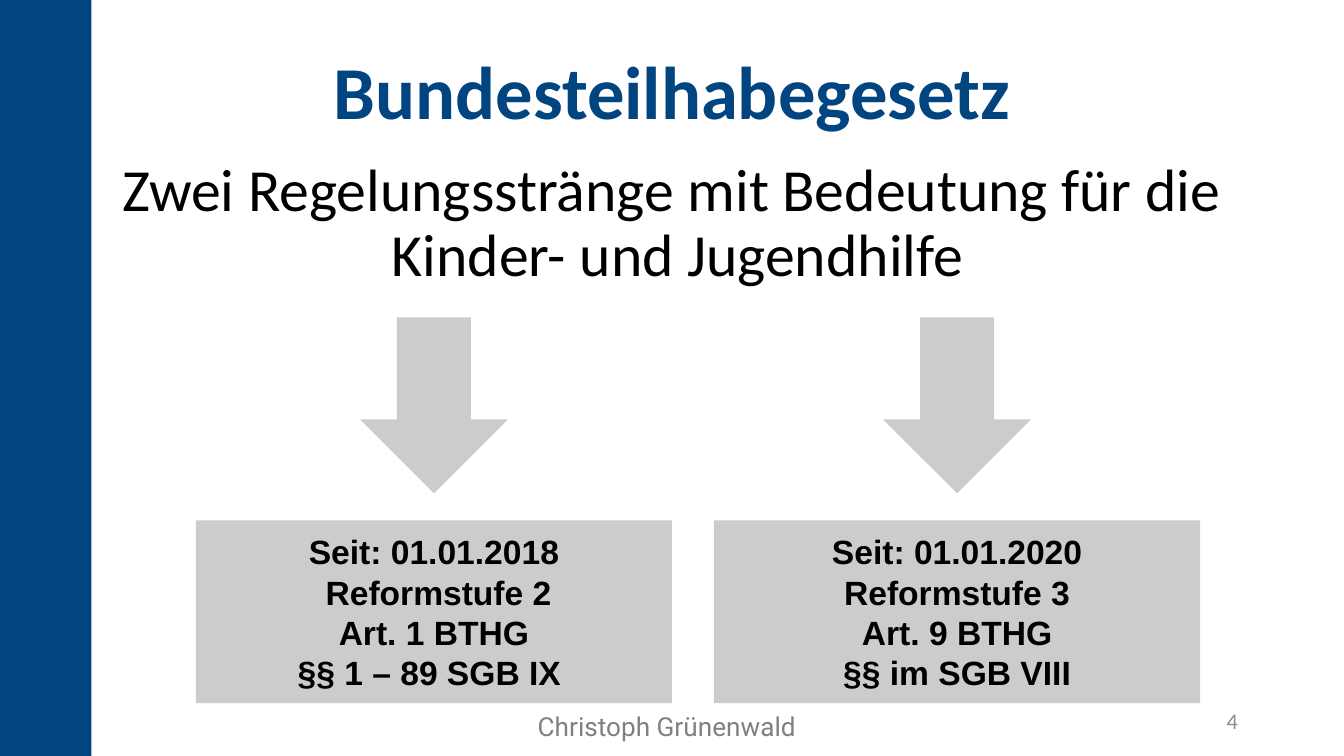
"""Build the Bundesteilhabegesetz slide with its two strands of regulation."""
from pptx import Presentation
from pptx import util as u
from pptx.enum import shapes, text

Pt = u.Pt
COLORS = {"blue": "004480", "grey": "CCCCCC", "black": "000000",
          "footer": "808080", "number": "8C8C8C"}
ALIGN = text.PP_ALIGN
SHAPE = shapes.MSO_SHAPE


def add_block(s, kind, box, color):
    sp = s.shapes.add_shape(kind, *map(Pt, box))
    sp.shadow.inherit = False
    sp.fill.solid()
    sp.fill.fore_color.rgb = u_color(color)
    sp.line.fill.background()
    return sp


def write(sp, lines, color, align, anchor, font, para={}):
    tf = sp.text_frame
    tf.word_wrap = True
    tf.vertical_anchor = anchor
    for i, line in enumerate(lines):
        p = tf.paragraphs[0] if i == 0 else tf.add_paragraph()
        p.alignment = align
        for name, value in para.items():
            setattr(p, name, value)
        r = p.add_run()
        r.text = line
        for name, value in font.items():
            setattr(r.font, name, value)
        r.font.color.rgb = u_color(color)
    return tf


from pptx.dml.color import RGBColor

u_color = lambda name: RGBColor.from_string(COLORS[name])

prs = Presentation()
prs.slide_width, prs.slide_height = Pt(720), Pt(405)
s = prs.slides.add_slide(prs.slide_layouts[6])

add_block(s, SHAPE.RECTANGLE, (0, 0, 49, 405), "blue")

sp = s.shapes.add_textbox(Pt(281), Pt(377.3), Pt(255), Pt(24.5))
write(sp, ["Christoph Grünenwald"], "footer", ALIGN.LEFT, text.MSO_ANCHOR.TOP,
      {"name": "Roboto", "size": Pt(14)})

sp = s.shapes.add_textbox(Pt(36), Pt(26), Pt(648), Pt(261))
tf = write(sp, ["Bundesteilhabegesetz",
                "Zwei Regelungsstränge mit Bedeutung für die Kinder- und Jugendhilfe "],
           "black", ALIGN.CENTER, text.MSO_ANCHOR.TOP,
           {"name": "Calibri", "size": Pt(32)}, {"line_spacing": 0.9})
title, subtitle = tf.paragraphs
for name, value in {"size": Pt(40), "bold": True}.items():
    setattr(title.runs[0].font, name, value)
title.runs[0].font.color.rgb = u_color("blue")
subtitle.space_before = Pt(13)
for p in tf.paragraphs:
    pPr = p._p.get_or_add_pPr()
    pPr.set("marL", str(Pt(13.5)))
    pPr.set("indent", str(Pt(-13.5)))

sp = s.shapes.add_textbox(Pt(508.3), Pt(375), Pt(162), Pt(21.6))
write(sp, ["4"], "number", ALIGN.RIGHT, text.MSO_ANCHOR.MIDDLE,
      {"name": "Calibri", "size": Pt(12)})

strands = [
    (105, 255, ["Seit: 01.01.2018", " Reformstufe 2", "Art. 1 BTHG", "§§ 1 – 89 SGB IX "]),
    (382.5, 260.5, ["Seit: 01.01.2020", "Reformstufe 3", "Art. 9 BTHG", "§§ im SGB VIII"]),
]
arrow_width = 79.2
for left, width, lines in strands:
    arrow_left = left + (width - arrow_width) / 2
    add_block(s, SHAPE.DOWN_ARROW, (arrow_left, 170, arrow_width, 94.3), "grey")
    sp = add_block(s, SHAPE.RECTANGLE, (left, 278.8, width, 98), "grey")
    write(sp, lines, "black", ALIGN.CENTER, text.MSO_ANCHOR.MIDDLE,
          {"name": "Arial", "size": Pt(18), "bold": True})

prs.save("out.pptx")
